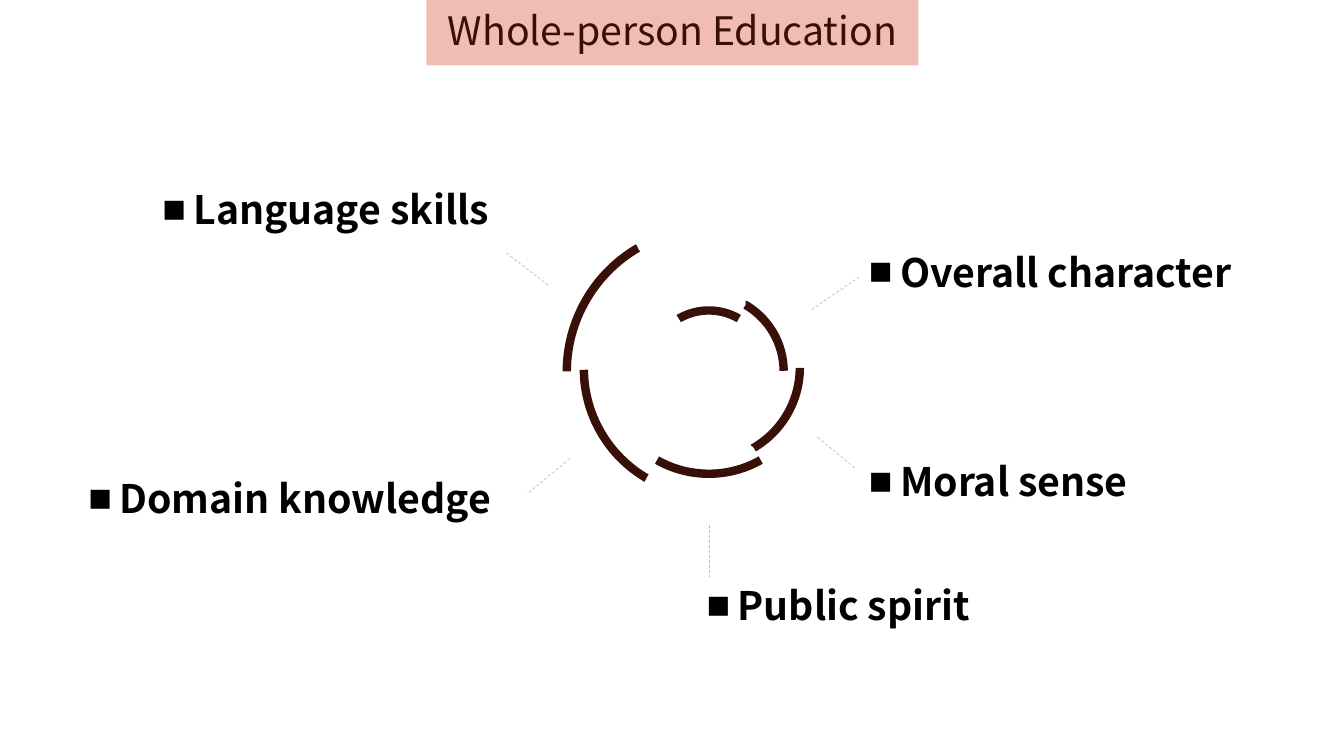
from pptx import Presentation
from pptx.dml.color import RGBColor
from pptx.enum.dml import MSO_LINE
from pptx.enum.shapes import MSO_CONNECTOR, MSO_SHAPE
from pptx.enum.text import MSO_ANCHOR, MSO_AUTO_SIZE, PP_ALIGN
from pptx.util import Inches, Pt
from lxml.etree import SubElement
from pptx.oxml.ns import qn

COLORS = {"dark": "381007", "pink": "E99280", "text": "000000", "gray": "BFBFBF"}
FONT = "Noto Sans CJK SC"


def rgb(name):
    return RGBColor.from_string(COLORS[name])


def write(frame, text, color="text", bold=False, align=PP_ALIGN.LEFT,
          bullet=None, spacing=None):
    par = frame.paragraphs[0]
    if bullet:
        props = par._p.get_or_add_pPr()
        props.set("marL", str(Inches(0.31)))
        props.set("indent", str(-Inches(0.31)))
        SubElement(props, qn("a:buFont"), typeface="Arial")
        SubElement(props, qn("a:buChar"), char=bullet)
    par.alignment = align
    if spacing:
        par.line_spacing = spacing
    run = par.add_run()
    run.text = text
    font = run.font
    font.name, font.size, font.bold = FONT, Pt(28), bold
    font.color.rgb = rgb(color)


class Deck:
    def __init__(self):
        self.file = Presentation()
        self.file.slide_width = Inches(13.33)
        self.file.slide_height = Inches(7.5)
        self.slide = self.file.slides.add_slide(self.file.slide_layouts[5])
        self.shapes = self.slide.shapes

    def title(self, text, left, top, width, height):
        box = self.shapes.title
        box.left, box.top = Inches(left), Inches(top)
        box.width, box.height = Inches(width), Inches(height)
        box.fill.solid()
        box.fill.fore_color.rgb = rgb("pink")
        tint = box.fill._xPr.find(".//" + qn("a:srgbClr"))
        SubElement(tint, qn("a:alpha"), val="60000")
        frame = box.text_frame
        frame.word_wrap = False
        frame.auto_size = MSO_AUTO_SIZE.NONE
        frame.vertical_anchor = MSO_ANCHOR.MIDDLE
        write(frame, text, color="dark", align=PP_ALIGN.CENTER, spacing=0.9)

    def arc(self, left, top, width, height, turn):
        arc = self.shapes.add_shape(
            MSO_SHAPE.ARC, Inches(left), Inches(top),
            Inches(width), Inches(height))
        arc.adjustments[0], arc.adjustments[1] = 143.79, 180.18
        arc.rotation = turn
        arc.shadow.inherit = False
        arc.fill.background()
        arc.line.color.rgb = rgb("dark")
        arc.line.width = Pt(6)

    def label(self, text, left, top, width, align):
        box = self.shapes.add_textbox(
            Inches(left), Inches(top), Inches(width), Inches(0.57))
        frame = box.text_frame
        frame.word_wrap = True
        frame.auto_size = MSO_AUTO_SIZE.SHAPE_TO_FIT_TEXT
        write(frame, text, bold=True, align=align, bullet="■")

    def dash(self, *ends):
        line = self.shapes.add_connector(
            MSO_CONNECTOR.STRAIGHT, *[Inches(end) for end in ends])
        SubElement(line._element.spPr, qn("a:effectLst"))
        line.line.color.rgb = rgb("gray")
        line.line.width = Pt(0.5)
        line.line.dash_style = MSO_LINE.DASH


def main():
    deck = Deck()
    deck.title("Whole-person Education", 4.23, 0, 4.88, 0.65)

    # Spiral: growing arcs, each turned 60 degrees further
    arcs = [(6.44, 3.08, 1.18, 1.18), (6.27, 2.93, 1.51, 1.49),
            (6.11, 2.75, 1.83, 1.81), (6, 2.67, 2.06, 2.03),
            (5.78, 2.45, 2.48, 2.45), (5.61, 2.28, 2.82, 2.79)]
    for step, place in enumerate(arcs):
        deck.arc(*place, turn=step * 60)

    # Labels around the spiral
    for text, left, top, width, align in [
        ("Overall character", 8.52, 2.41, 3.99, PP_ALIGN.LEFT),
        ("Moral sense", 8.52, 4.49, 3.99, PP_ALIGN.LEFT),
        ("Public spirit", 6.91, 5.72, 3.99, PP_ALIGN.LEFT),
        ("Domain knowledge", 0, 4.66, 4.97, PP_ALIGN.RIGHT),
        ("Language skills", 0.96, 1.79, 3.99, PP_ALIGN.RIGHT),
    ]:
        deck.label(text, left, top, width, align)

    # Dashed leaders from the arcs to the labels
    for ends in [(8.05, 3.07, 8.52, 2.75), (8.11, 4.34, 8.49, 4.65),
                 (7.04, 5.21, 7.04, 5.72), (5.65, 4.55, 5.23, 4.9),
                 (5.44, 2.83, 5.02, 2.51)]:
        deck.dash(*ends)

    deck.file.save("out.pptx")


if __name__ == "__main__":
    main()
